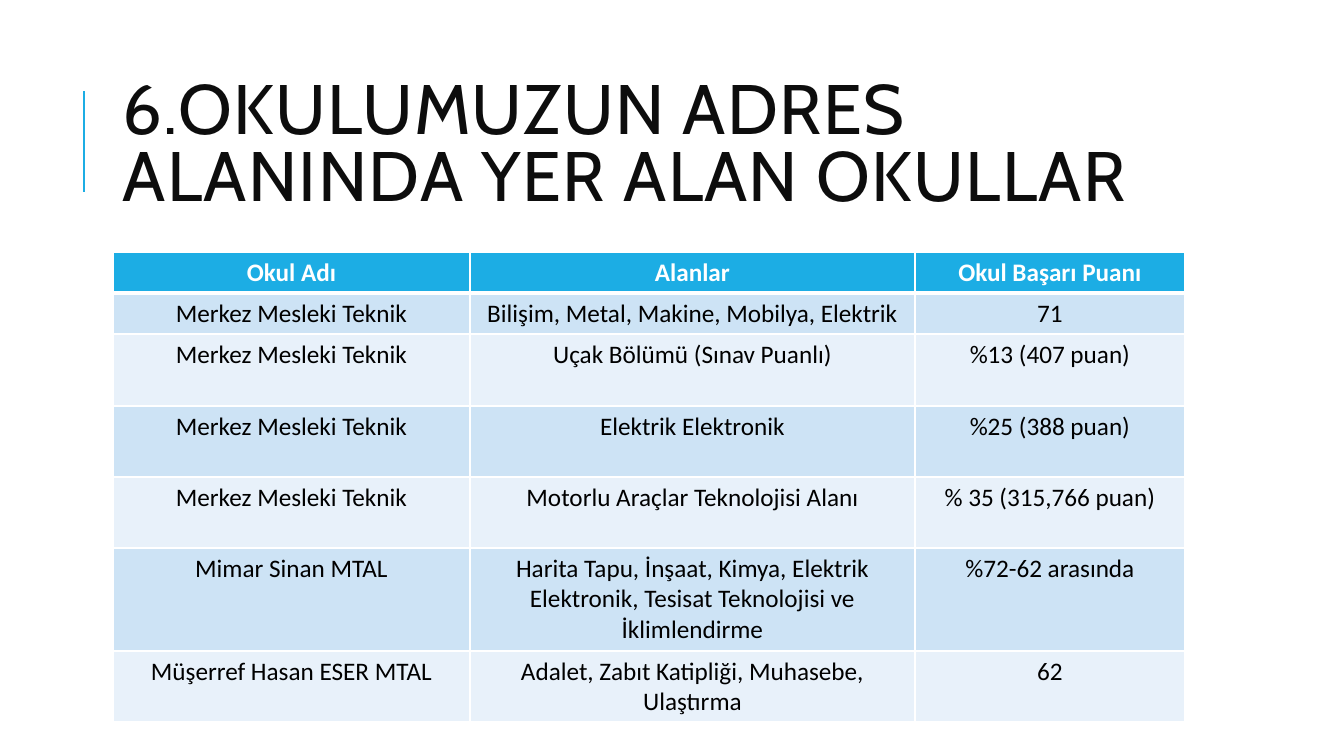
import dataclasses

import pptx
import pptx.dml.color
import pptx.enum.shapes
import pptx.enum.text
import pptx.oxml
import pptx.oxml.ns
import pptx.util
from lxml import etree

PX = 914400 / 100.8


@dataclasses.dataclass(frozen=True)
class Theme:
    accent: str = "1CADE4"
    title: str = "0D0D0D"
    header_text: str = "FFFFFF"
    body_text: str = "000000"
    grid: str = "FFFFFF"
    bands: tuple = ("CDE3F5", "E8F1FA")
    title_font: str = "Cabin"
    table_font: str = "Calibri"
    title_size: int = 50
    table_size: int = 18


THEME = Theme()

TITLE = "6.OKULUMUZUN ADRES ALANINDA YER ALAN OKULLAR"
SCHOOLS = [
    ("Okul Adı", "Alanlar", "Okul Başarı Puanı"),
    ("Merkez Mesleki Teknik", "Bilişim, Metal, Makine, Mobilya, Elektrik", "71"),
    ("Merkez Mesleki Teknik", "Uçak Bölümü (Sınav Puanlı)", "%13 (407 puan)"),
    ("Merkez Mesleki Teknik", "Elektrik Elektronik", "%25 (388 puan)"),
    ("Merkez Mesleki Teknik", "Motorlu Araçlar Teknolojisi Alanı", "% 35 (315,766 puan)"),
    ("Mimar Sinan MTAL",
     "Harita Tapu, İnşaat, Kimya, Elektrik Elektronik, Tesisat Teknolojisi ve İklimlendirme",
     "%72-62 arasında"),
    ("Müşerref Hasan ESER MTAL", "Adalet, Zabıt Katipliği, Muhasebe, Ulaştırma", "62"),
]
COLUMN_WIDTHS = (357, 445, 270)
ROW_HEIGHTS = (41, 41, 72, 71, 71, 103, 71)


def px(length):
    return pptx.util.Emu(round(length * PX))


def rgb(value):
    return pptx.dml.color.RGBColor.from_string(value)


def add_run(paragraph, text, font, size, color, bold=False):
    run = paragraph.add_run()
    run.text = text
    run.font.name = font
    run.font.size = pptx.util.Pt(size)
    run.font.color.rgb = rgb(color)
    run.font.bold = bold
    return run


def add_title(slide, left, top, width, height):
    accent_x = left - 29
    accent = slide.shapes.add_connector(
        pptx.enum.shapes.MSO_CONNECTOR.STRAIGHT,
        px(accent_x), px(top + 127), px(accent_x), px(top + 26))
    accent.line.color.rgb = rgb(THEME.accent)
    accent.line.width = pptx.util.Pt(1.5)
    etree.SubElement(accent._element.spPr, pptx.oxml.ns.qn("a:effectLst"))

    heading = slide.shapes.add_textbox(px(left), px(top), px(width), px(height))
    frame = heading.text_frame
    frame.word_wrap = True
    frame.vertical_anchor = pptx.enum.text.MSO_ANCHOR.MIDDLE
    paragraph = frame.paragraphs[0]
    paragraph.line_spacing = 0.8
    run = add_run(paragraph, TITLE, THEME.title_font, THEME.title_size, THEME.title)
    run.font._element.set("spc", "100")


def set_borders(cell, top, bottom):
    properties = cell._tc.get_or_add_tcPr()
    for side, points in (("L", 1), ("R", 1), ("T", top), ("B", bottom)):
        properties.append(pptx.oxml.parse_xml(
            f'<a:ln{side} {pptx.oxml.ns.nsdecls("a")} w="{pptx.util.Pt(points)}">'
            f'<a:solidFill><a:srgbClr val="{THEME.grid}"/></a:solidFill></a:ln{side}>'))


def add_school_table(slide, left, top):
    table = slide.shapes.add_table(
        len(SCHOOLS), len(COLUMN_WIDTHS), px(left), px(top),
        px(sum(COLUMN_WIDTHS)), px(sum(ROW_HEIGHTS))).table
    for column, width in zip(table.columns, COLUMN_WIDTHS):
        column.width = px(width)
    for row, height in zip(table.rows, ROW_HEIGHTS):
        row.height = px(height)

    for row_index, school in enumerate(SCHOOLS):
        is_header = row_index == 0
        fill = THEME.accent if is_header else THEME.bands[(row_index - 1) % 2]
        color = THEME.header_text if is_header else THEME.body_text
        for column_index, text in enumerate(school):
            cell = table.cell(row_index, column_index)
            set_borders(cell, 3 if row_index == 1 else 1, 3 if is_header else 1)
            cell.fill.solid()
            cell.fill.fore_color.rgb = rgb(fill)
            paragraph = cell.text_frame.paragraphs[0]
            paragraph.alignment = pptx.enum.text.PP_ALIGN.CENTER
            add_run(paragraph, text, THEME.table_font, THEME.table_size, color, is_header)


def main():
    presentation = pptx.Presentation()
    presentation.slide_width = px(1344)
    presentation.slide_height = px(756)
    slide = presentation.slides.add_slide(presentation.slide_layouts[6])
    add_title(slide, 113, 65, 1072, 165)
    add_school_table(slide, 113, 252)
    presentation.save("out.pptx")


if __name__ == "__main__":
    main()
